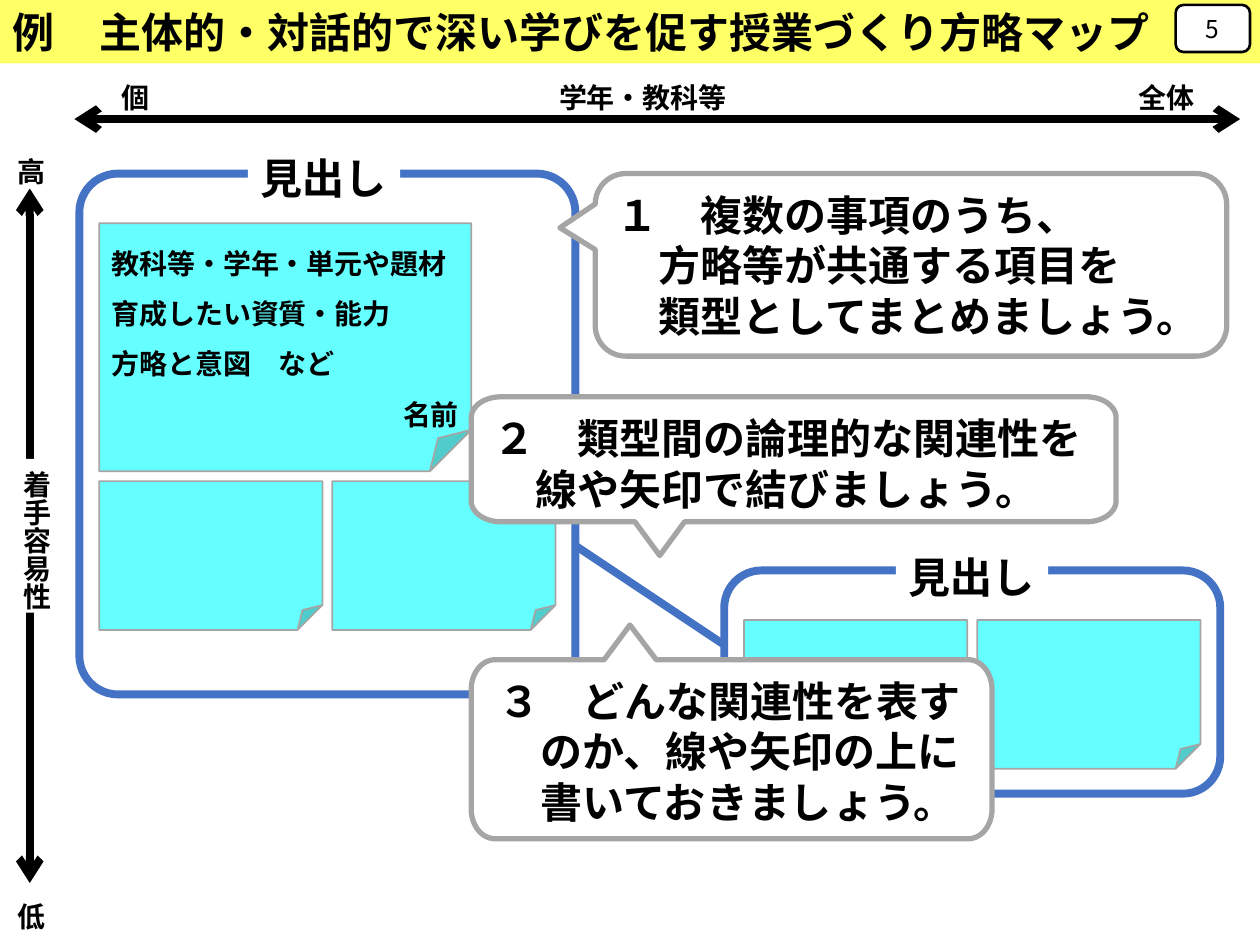
from dataclasses import dataclass
from math import cos, radians, sin

from lxml.etree import SubElement
from pptx import Presentation
from pptx.dml.color import RGBColor
from pptx.enum.shapes import MSO_CONNECTOR, MSO_SHAPE
from pptx.enum.text import MSO_ANCHOR, MSO_AUTO_SIZE, PP_ALIGN
from pptx.oxml.ns import qn
from pptx.util import Cm, Pt


@dataclass(frozen=True)
class Theme:
    font: str = "Noto Sans CJK JP"
    black: str = "000000"
    white: str = "FFFFFF"
    banner: str = "FFFF66"
    note: str = "66FFFF"
    gray: str = "A5A5A5"
    blue: str = "4472C4"
    large: int = 24
    label: int = 16
    number: int = 14
    thick: float = 4.5
    callout_line: float = 3
    number_line: float = 1.5
    thin: float = 1


THEME = Theme()


def paint(shape, fill=None, line=None, line_width=1):
    shape.shadow.inherit = False
    if fill:
        shape.fill.solid()
        shape.fill.fore_color.rgb = RGBColor.from_string(fill)
    else:
        shape.fill.background()
    if line:
        shape.line.color.rgb = RGBColor.from_string(line)
        shape.line.width = Pt(line_width)
    else:
        shape.line.fill.background()


def write(shape, lines, size, bold=True, anchor=MSO_ANCHOR.TOP,
          alignments=None, spacing=None, wrap=False, grow=True):
    frame = shape.text_frame
    frame.word_wrap = wrap
    frame.vertical_anchor = anchor
    frame.auto_size = MSO_AUTO_SIZE.SHAPE_TO_FIT_TEXT if grow else MSO_AUTO_SIZE.NONE
    for index, line in enumerate(lines):
        paragraph = frame.add_paragraph() if index else frame.paragraphs[0]
        paragraph.alignment = alignments[index] if alignments else PP_ALIGN.LEFT
        if spacing:
            paragraph.line_spacing = spacing
        run = paragraph.add_run()
        run.text = line
        run.font.size = Pt(size)
        run.font.bold = bold
        run.font.color.rgb = RGBColor.from_string(THEME.black)
        run.font.name = THEME.font
        SubElement(run.font._element, qn("a:ea"), typeface=THEME.font)


def add_box(slide, kind, left, top, width, height, **style):
    shape = slide.shapes.add_shape(kind, Cm(left), Cm(top), Cm(width), Cm(height))
    paint(shape, **style)
    return shape


def add_text(slide, lines, left, top, width, height, size):
    shape = slide.shapes.add_textbox(Cm(left), Cm(top), Cm(width), Cm(height))
    write(shape, lines, size)


def add_note(slide, left, top, width=4.5, height=3):
    return add_box(slide, MSO_SHAPE.FOLDED_CORNER, left, top, width, height,
                   fill=THEME.note, line=THEME.gray, line_width=THEME.thin)


def add_frame(slide, left, top, width, height, corner, fill=None):
    shape = add_box(slide, MSO_SHAPE.ROUNDED_RECTANGLE, left, top, width, height,
                    fill=fill, line=THEME.blue, line_width=THEME.thick)
    shape.adjustments[0] = corner


def add_heading(slide, left, top):
    shape = add_box(slide, MSO_SHAPE.RECTANGLE, left, top, 3.07, 1.28, fill=THEME.white)
    write(shape, ["見出し"], THEME.large)


def add_line(slide, start, end, color, arrows=False):
    connector = slide.shapes.add_connector(
        MSO_CONNECTOR.STRAIGHT, *(Cm(value) for value in (*start, *end)))
    connector.line.color.rgb = RGBColor.from_string(color)
    connector.line.width = Pt(THEME.thick)
    if arrows:
        line = connector.line._get_or_add_ln()
        for name in ("a:headEnd", "a:tailEnd"):
            SubElement(line, qn(name), type="arrow")
    SubElement(connector._element.spPr, qn("a:effectLst"))


def add_callout(slide, left, top, right, bottom, radius_x, radius_y, tail, upward):
    """Rounded box with a narrow tail on its top or bottom edge."""
    corners = [(left + radius_x, top + radius_y, 180),
               (right - radius_x, top + radius_y, 270),
               (right - radius_x, bottom - radius_y, 0),
               (left + radius_x, bottom - radius_y, 90)]
    points = []
    for index, (x, y, start) in enumerate(corners):
        for angle in range(start, start + 91, 6):
            points.append((x + radius_x * cos(radians(angle)),
                           y + radius_y * sin(radians(angle))))
        if index == (0 if upward else 2):
            points += tail
    scaled = [(Cm(x), Cm(y)) for x, y in points]
    builder = slide.shapes.build_freeform(*scaled[0])
    builder.add_line_segments(scaled[1:], close=True)
    paint(builder.convert_to_shape(), THEME.white, THEME.gray, THEME.callout_line)


def add_banner(slide):
    add_box(slide, MSO_SHAPE.RECTANGLE, 0, 0, 25.4, 1.28, fill=THEME.banner)
    add_text(slide, ["主体的・対話的で深い学びを促す授業づくり方略マップ"],
             1.75, 0, 21.9, 1.28, THEME.large)
    add_text(slide, ["例"], 0, 0, 1.37, 1.28, THEME.large)
    number = add_box(slide, MSO_SHAPE.ROUNDED_RECTANGLE, 23.7, 0.1, 1.5, 0.95,
                     fill=THEME.white, line=THEME.black, line_width=THEME.number_line)
    write(number, ["5"], THEME.number, bold=False, anchor=MSO_ANCHOR.MIDDLE,
          alignments=[PP_ALIGN.CENTER], grow=False)


def add_groups(slide):
    # Lower right group
    for left in (19.7, 15):
        add_note(slide, left, 12.5)
    add_frame(slide, 14.6, 11.5, 10, 4.5, 0.167)
    add_heading(slide, 18.06, 11)
    # Upper left group
    add_frame(slide, 1.6, 3.5, 10, 10.5, 0.078, THEME.white)
    for left in (6.7, 2):
        add_note(slide, left, 9.7)
    example = add_note(slide, 2, 4.5, 7.5, 5)
    write(example, ["教科等・学年・単元や題材", "育成したい資質・能力", "方略と意図　など", "名前"],
          THEME.label, alignments=[PP_ALIGN.LEFT] * 3 + [PP_ALIGN.RIGHT],
          spacing=1.5, wrap=True, grow=False)
    add_heading(slide, 5, 2.95)


def add_instructions(slide):
    # First step
    first = add_box(slide, MSO_SHAPE.ROUNDED_RECTANGULAR_CALLOUT, 12, 3.5, 12.73, 3.68,
                    fill=THEME.white, line=THEME.gray, line_width=THEME.callout_line)
    for index, value in enumerate((-0.556, -0.203, 0.167)):
        first.adjustments[index] = value
    write(first, ["１　複数の事項のうち、", "　方略等が共通する項目を", "　類型としてまとめましょう。"],
          THEME.large, anchor=MSO_ANCHOR.MIDDLE)
    # Relation between the groups
    add_line(slide, (11.6, 11), (14.6, 13), THEME.blue)
    # Second step
    add_callout(slide, 9.5, 8, 22.5, 10.52, 0.6, 0.42,
                [(13.8, 10.52), (13.3, 11.2), (12.8, 10.52)], upward=False)
    add_text(slide, ["２　類型間の論理的な関連性を", "　線や矢印で結びましょう。"],
             9.7, 8.2, 12.47, 2.31, THEME.large)
    # Third step
    add_callout(slide, 9.5, 13.3, 20, 16.91, 0.48, 0.6,
                [(12.18, 13.3), (12.7, 12.6), (13.23, 13.3)], upward=True)
    add_text(slide, ["３　どんな関連性を表す", "　のか、線や矢印の上に", "　書いておきましょう。"],
             9.8, 13.49, 9.91, 3.33, THEME.large)


def add_axes(slide):
    # Horizontal axis
    add_line(slide, (1.5, 2.4), (25, 2.4), THEME.black, arrows=True)
    for label, left, width in (("学年・教科等", 11.02, 3.94), ("個", 2.2, 1.1),
                               ("全体", 22.7, 1.65)):
        add_text(slide, [label], left, 1.5, width, 0.94, THEME.label)
    # Vertical axis
    add_line(slide, (0.6, 3.8), (0.6, 17.8), THEME.black, arrows=True)
    title = add_box(slide, MSO_SHAPE.RECTANGLE, 0, 9.25, 1.19, 3.1, fill=THEME.white)
    write(title, ["着手容易性"], THEME.label)
    title.text_frame._txBody.bodyPr.set("vert", "eaVert")
    for label, top in (("高", 3), ("低", 18.01)):
        add_text(slide, [label], 0.1, top, 1.1, 0.94, THEME.label)


def main():
    presentation = Presentation()
    presentation.slide_width, presentation.slide_height = Cm(25.4), Cm(19.05)
    slide = presentation.slides.add_slide(presentation.slide_layouts[6])
    add_banner(slide)
    add_groups(slide)
    add_instructions(slide)
    add_axes(slide)
    presentation.save("out.pptx")


if __name__ == "__main__":
    main()
